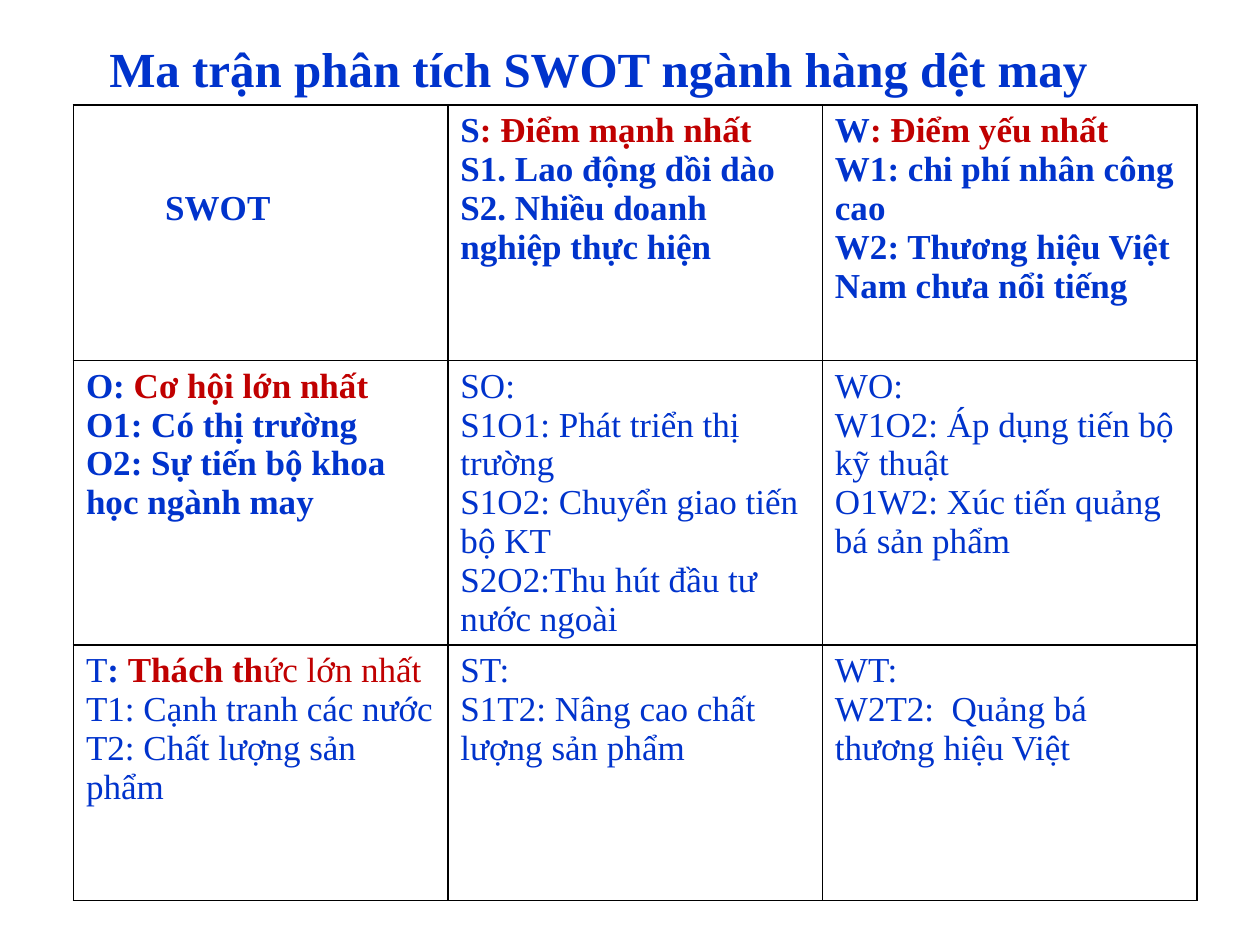
from dataclasses import dataclass

from lxml import etree
from pptx import Presentation
from pptx.dml.color import RGBColor
from pptx.enum import text
from pptx.oxml import ns
from pptx.util import Cm, Pt


@dataclass
class Theme:
    font: str = "Times New Roman"
    blue: RGBColor = RGBColor(0x00, 0x33, 0xCC)
    red: RGBColor = RGBColor(0xC0, 0x00, 0x00)
    white: RGBColor = RGBColor(0xFF, 0xFF, 0xFF)
    line: str = "000000"
    edge: int = Pt(1)
    head: int = Pt(28)
    body: int = Pt(20)


theme = Theme()


def style(font, size, bold):
    font.name, font.size, font.bold = theme.font, size, bold
    font.color.rgb = theme.blue


def border(cell):
    props = cell._tc.get_or_add_tcPr()
    for side in ("lnL", "lnR", "lnT", "lnB"):
        line = etree.SubElement(props, ns.qn(f"a:{side}"), w=str(theme.edge))
        fill = etree.SubElement(line, ns.qn("a:solidFill"))
        etree.SubElement(fill, ns.qn("a:srgbClr"), val=theme.line)


# Each cell: bold or not, then its lines. A line is plain text
# or a list of runs (words, red, bold).
grid = [
    [
        (True, ["SWOT"]),
        (True, [[("S", False, True), (": Điểm mạnh nhất", True, True)],
                "S1. Lao động dồi dào",
                "S2. Nhiều doanh nghiệp thực hiện"]),
        (True, [[("W", False, True), (": Điểm yếu nhất", True, True)],
                "W1: chi phí nhân công cao",
                "W2: Thương hiệu Việt Nam chưa nổi tiếng"]),
    ],
    [
        (True, [[("O: ", False, True), ("Cơ hội lớn nhất", True, True)],
                "O1: Có thị trường",
                "O2: Sự tiến bộ khoa học ngành may"]),
        (False, ["SO:",
                 "S1O1: Phát triển thị trường",
                 "S1O2: Chuyển giao tiến bộ KT",
                 "S2O2:Thu hút đầu tư nước ngoài"]),
        (False, ["WO:",
                 "W1O2: Áp dụng tiến bộ kỹ thuật",
                 "O1W2: Xúc tiến quảng bá sản phẩm"]),
    ],
    [
        (False, [[("T", False, False), (": ", False, True),
                  ("Thách th", True, True), ("ức lớn nhất", True, False)],
                 "T1: Cạnh tranh các nước",
                 "T2: Chất lượng sản phẩm"]),
        (False, ["ST:", "S1T2: Nâng cao chất lượng sản phẩm"]),
        (False, ["WT:", "W2T2:  Quảng bá thương hiệu Việt"]),
    ],
]

deck = Presentation()
deck.slide_width, deck.slide_height = Cm(25.4), Cm(19.05)
slide = deck.slides.add_slide(deck.slide_layouts[5])

# Title
title = slide.shapes.title
title.left, title.top = Cm(1.48), Cm(0.64)
title.width, title.height = Cm(21.16), Cm(1.45)
frame = title.text_frame
frame.text = "Ma trận phân tích SWOT ngành hàng dệt may"
frame.auto_size = text.MSO_AUTO_SIZE.NONE
frame.vertical_anchor = text.MSO_ANCHOR.BOTTOM
para = frame.paragraphs[0]
para.alignment = text.PP_ALIGN.CENTER
style(para.font, theme.head, True)

# Matrix
table = slide.shapes.add_table(
    3, 3, Cm(1.48), Cm(2.12), Cm(22.65), Cm(15.45)).table
table.first_row = table.horz_banding = False
for i, row in enumerate(grid):
    for j, (bold, lines) in enumerate(row):
        cell = table.cell(i, j)
        border(cell)
        cell.fill.solid()
        cell.fill.fore_color.rgb = theme.white
        for k, line in enumerate(lines):
            frame = cell.text_frame
            para = frame.add_paragraph() if k else frame.paragraphs[0]
            style(para.font, theme.body, bold)
            if isinstance(line, str):
                line = [(line, False, bold)]
            for words, red, heavy in line:
                run = para.add_run()
                run.text = words
                if red:
                    run.font.color.rgb = theme.red
                if heavy != bold:
                    run.font.bold = heavy

# The corner label sits two lines down and indented
label = table.cell(0, 0)
label.margin_left, label.margin_top = Cm(1.85), Cm(1.69)

deck.save("out.pptx")
